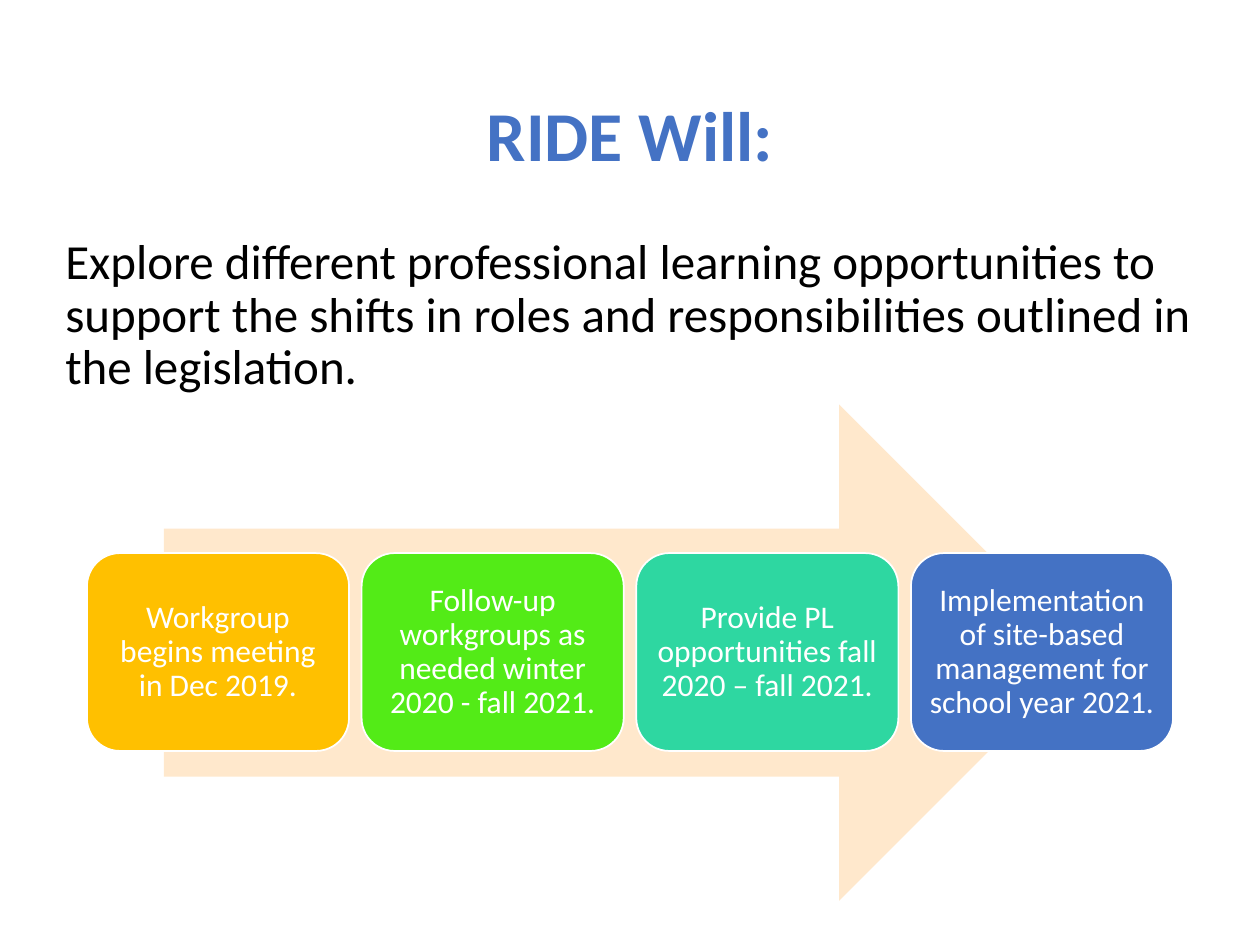
"""Build the RIDE Will slide: a heading, a statement and a four-step arrow."""
from pptx import Presentation
from pptx.dml.color import RGBColor
from pptx.enum.shapes import MSO_SHAPE
from pptx.enum.text import MSO_ANCHOR, PP_ALIGN
from pptx.util import Inches, Pt

ARROW = MSO_SHAPE.RIGHT_ARROW
CARD = MSO_SHAPE.ROUNDED_RECTANGLE
MIDDLE, TOP = MSO_ANCHOR.MIDDLE, MSO_ANCHOR.TOP
CENTER, LEFT = PP_ALIGN.CENTER, PP_ALIGN.LEFT

MARGIN = 0.69
CARD_WIDTH, CARD_HEIGHT, CARD_TOP = 2.08, 1.57, 4.39
CARD_PITCH = 2.18
STEPS = [
    ("Workgroup begins meeting in Dec 2019.", "FFC000"),
    ("Follow-up workgroups as needed winter 2020 - fall 2021.", "53EB17"),
    ("Provide PL opportunities fall 2020 – fall 2021.", "2ED7A1"),
    ("Implementation of site-based management for school year 2021.", "4472C4"),
]


def paint(color_format, color):
    color_format.rgb = RGBColor.from_string(color)


def write(shape, text, size, color, align, anchor, bold=False):
    frame = shape.text_frame
    frame.text = text
    frame.word_wrap = True
    frame.vertical_anchor = anchor
    para = frame.paragraphs[0]
    para.alignment = align
    para.line_spacing = 0.9
    font = para.runs[0].font
    font.name, font.size, font.bold = "Calibri", Pt(size), bold
    paint(font.color, color)
    return frame


deck = Presentation()
deck.slide_width, deck.slide_height = Inches(10), Inches(7.5)
page = deck.slides.add_slide(deck.slide_layouts[5])

title = page.shapes.title
title.left, title.top = Inches(MARGIN), Inches(0.38)
title.width, title.height = Inches(10 - 2 * MARGIN), Inches(1.45)
write(title, "RIDE Will:", 40, "4472C4", CENTER, MIDDLE, bold=True)

statement = page.shapes.add_textbox(Inches(0.42), Inches(1.83), Inches(9.16), Inches(4.93))
write(
    statement,
    "Explore different professional learning opportunities to support the shifts "
    "in roles and responsibilities outlined in the legislation.",
    28, "000000", LEFT, TOP,
)

arrow = page.shapes.add_shape(ARROW, Inches(1.3), Inches(3.21), Inches(7.33), Inches(3.94))
arrow.shadow.inherit = False
arrow.fill.solid()
paint(arrow.fill.fore_color, "FFE8CC")
arrow.line.fill.background()

for column, (text, color) in enumerate(STEPS):
    card = page.shapes.add_shape(
        CARD, Inches(MARGIN + column * CARD_PITCH), Inches(CARD_TOP),
        Inches(CARD_WIDTH), Inches(CARD_HEIGHT),
    )
    card.shadow.inherit = False
    card.fill.solid()
    paint(card.fill.fore_color, color)
    paint(card.line.color, "FFFFFF")
    card.line.width = Pt(1)
    frame = write(card, text, 18, "FFFFFF", CENTER, MIDDLE)
    frame.margin_left = frame.margin_right = Inches(0.07)
    frame.margin_top = frame.margin_bottom = Inches(0.07)

deck.save("out.pptx")
